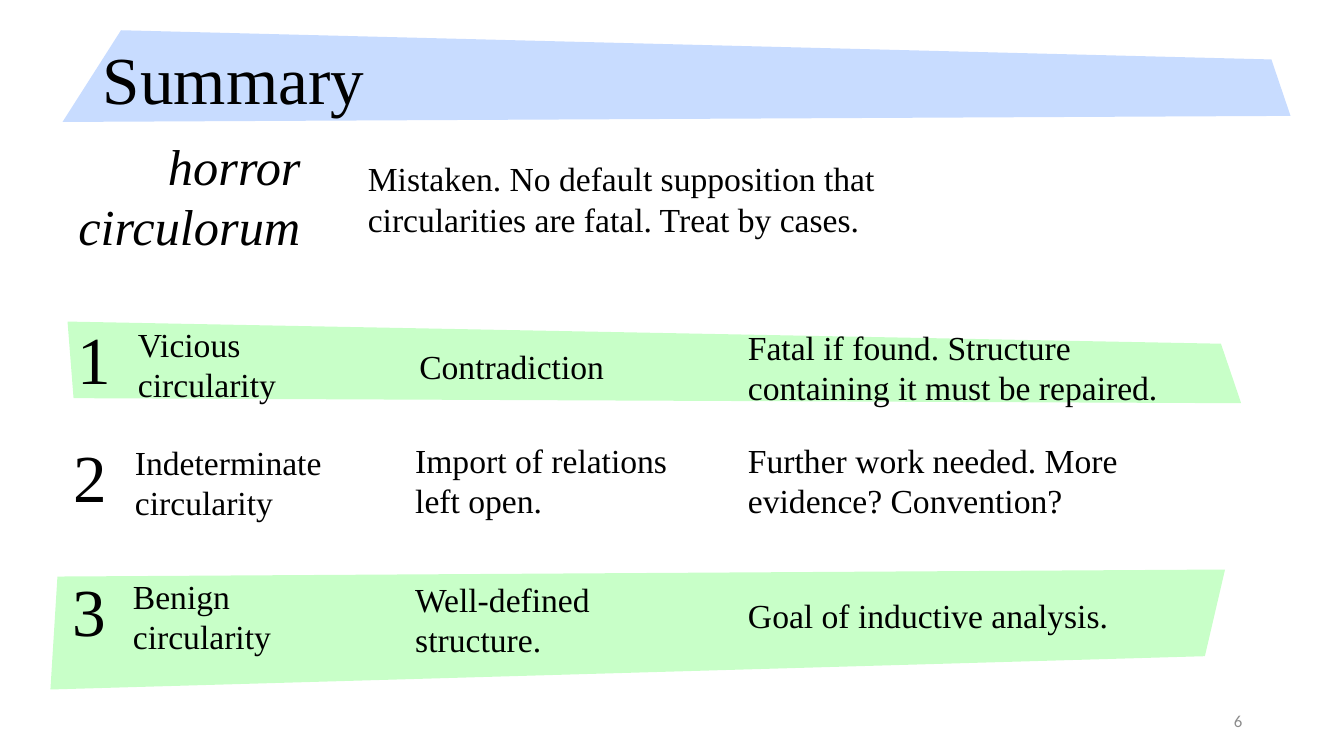
from dataclasses import dataclass

from pptx import Presentation
from pptx.dml.color import RGBColor
from pptx.enum.text import MSO_ANCHOR as Anchor, MSO_AUTO_SIZE as AutoSize, PP_ALIGN as Align
from pptx.shapes.autoshape import Shape
from pptx.text.text import TextFrame
from pptx.util import Inches, Pt


@dataclass(frozen=True)
class Theme:
    serif: str = "Times New Roman"
    sans: str = "Calibri"
    ink: str = "000000"
    grey: str = "8C8C8C"
    blue: str = "C8DCFF"
    green: str = "C8FFC8"
    heading: int = 48
    subheading: int = 36
    body: int = 24
    footer: int = 12


THEME = Theme()
Outline = tuple[tuple[float, float], ...]


@dataclass(frozen=True)
class Label:
    text: str
    left: float
    top: float
    width: float
    height: float = 0.91
    size: int = THEME.body
    color: str = THEME.ink
    font: str = THEME.serif
    align: Align = Align.LEFT
    anchor: Anchor = Anchor.TOP
    italic: bool = False
    wrap: bool = True


@dataclass(frozen=True)
class Case:
    number: Label
    kind: Label
    meaning: Label
    verdict: Label
    band: Outline = ()


def number_label(text: str, left: float, top: float) -> Label:
    return Label(text, left, top, 0.54, size=THEME.heading, wrap=False)


def format_text(frame: TextFrame, label: Label) -> None:
    frame.text = label.text
    frame.word_wrap = label.wrap
    frame.auto_size = AutoSize.NONE
    frame.vertical_anchor = label.anchor
    paragraph = frame.paragraphs[0]
    paragraph.alignment = label.align
    font = paragraph.font
    font.name, font.size, font.italic = label.font, Pt(label.size), label.italic
    font.color.rgb = RGBColor.from_string(label.color)


def place(shape: Shape, label: Label) -> None:
    shape.left, shape.top = Inches(label.left), Inches(label.top)
    shape.width, shape.height = Inches(label.width), Inches(label.height)
    format_text(shape.text_frame, label)


def add_label(shapes, label: Label) -> None:
    place(shapes.add_textbox(0, 0, 0, 0), label)


def add_band(shapes, outline: Outline, color: str) -> Shape:
    points = [(Inches(x), Inches(y)) for x, y in outline]
    builder = shapes.build_freeform(*points[0])
    builder.add_line_segments(points[1:], close=True)
    band = builder.convert_to_shape()
    band.shadow.inherit = False
    band.fill.solid()
    band.fill.fore_color.rgb = RGBColor.from_string(color)
    band.line.fill.background()
    return band


def add_case(shapes, case: Case) -> None:
    group = shapes.add_group_shape()
    if case.band:
        add_band(group.shapes, case.band, THEME.green)
    for label in (case.kind, case.number, case.meaning, case.verdict):
        add_label(group.shapes, label)


TITLE = Label("Summary", 0.92, 0.4, 8.5, 0.84, size=THEME.heading, anchor=Anchor.MIDDLE)
TITLE_BAND: Outline = ((1.2, 0.3), (12.61, 0.59), (12.8, 1.15), (0.62, 1.21))

INTRODUCTION = (
    Label("horror circulorum", 0.18, 1.29, 2.9, 1.31, size=THEME.subheading,
          align=Align.RIGHT, italic=True),
    Label("Mistaken. No default supposition that circularities are fatal. Treat by cases.",
          3.55, 1.52, 6.24),
)

CASES = (
    Case(
        number_label("1", 0.67, 3.1),
        Label("Vicious circularity", 1.27, 3.16, 1.95),
        Label("Contradiction", 4.06, 3.38, 2.05, 0.5, wrap=False),
        Label("Fatal if found. Structure containing it must be repaired.", 7.32, 3.19, 4.74),
        ((0.67, 3.19), (12.11, 3.41), (12.31, 4), (0.73, 3.95)),
    ),
    Case(
        number_label("2", 0.63, 4.27),
        Label("Indeterminate circularity", 1.24, 4.33, 2.18),
        Label("Import of relations left open.", 4.02, 4.31, 2.83),
        Label("Further work needed. More evidence? Convention?", 7.32, 4.31, 4.58),
    ),
    Case(
        number_label("3", 0.62, 5.6),
        Label("Benign circularity", 1.22, 5.66, 2.18),
        Label("Well-defined structure.", 4.02, 5.69, 2.83),
        Label("Goal of inductive analysis.", 7.32, 5.85, 4.58, 0.5),
        ((0.5, 6.84), (11.95, 6.51), (12.15, 5.65), (0.57, 5.72)),
    ),
)

PAGE_NUMBER = Label("6", 11.71, 6.95, 0.71, 0.4, THEME.footer, THEME.grey, THEME.sans,
                    Align.RIGHT, Anchor.MIDDLE)


def main() -> None:
    presentation = Presentation()
    presentation.slide_width, presentation.slide_height = Inches(13.33), Inches(7.5)
    slide = presentation.slides.add_slide(presentation.slide_layouts[5])

    # Title, with its band behind it
    title = slide.shapes.title
    place(title, TITLE)
    title.text_frame.paragraphs[0].line_spacing = 0.9
    title_band = add_band(slide.shapes, TITLE_BAND, THEME.blue)
    title.element.addprevious(title_band.element)

    # Page number and introduction
    for label in (PAGE_NUMBER, *INTRODUCTION):
        add_label(slide.shapes, label)

    # The three kinds of circularity
    for case in CASES:
        add_case(slide.shapes, case)

    presentation.save("out.pptx")


if __name__ == "__main__":
    main()
